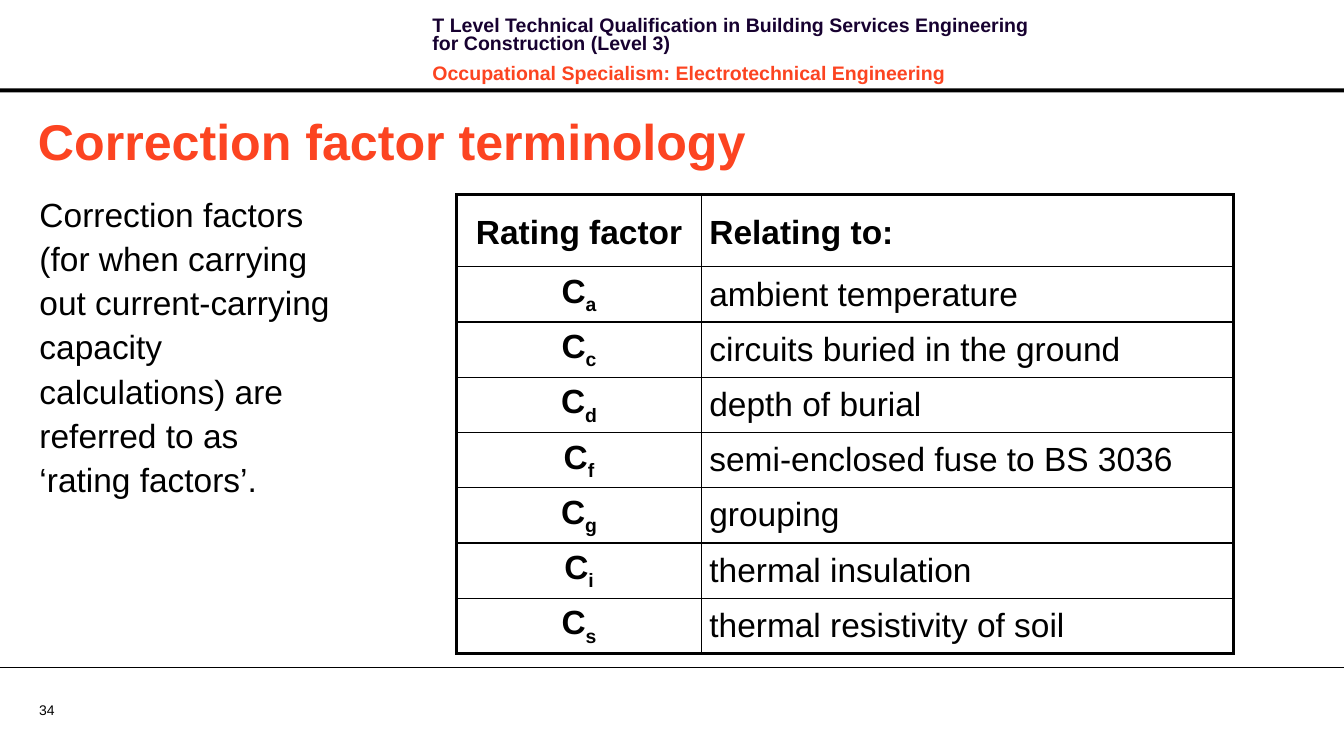
from lxml.etree import SubElement
from pptx import Presentation
from pptx.dml.color import RGBColor
from pptx.enum.shapes import MSO_CONNECTOR, MSO_SHAPE
from pptx.enum.text import MSO_ANCHOR, PP_ALIGN
from pptx.oxml.ns import qn
from pptx.util import Inches, Pt

SLIDE_W, SLIDE_H = Inches(13.39), Inches(7.48)
BLACK, NAVY, ORANGE = "000000", "170130", "FC4421"
OUTER, INNER = 2.25, 1

QUALIFICATION = [
    ("T Level Technical Qualification in Building Services Engineering "
     "for Construction (Level 3)", NAVY),
    ("Occupational Specialism: Electrotechnical Engineering", ORANGE),
]
TITLE = "Correction factor terminology"
EXPLANATION = ("Correction factors (for when carrying out current-carrying capacity "
               "calculations) are referred to as ‘rating factors’.")
HEADINGS = ("Rating factor", "Relating to:")
FACTORS = [
    ("a", "ambient temperature"),
    ("c", "circuits buried in the ground"),
    ("d", "depth of burial"),
    ("f", "semi-enclosed fuse to BS 3036"),
    ("g", "grouping"),
    ("i", "thermal insulation"),
    ("s", "thermal resistivity of soil"),
]


def area(left, top, width, height):
    """Turn percentages of the slide into a box in EMU."""
    return (int(SLIDE_W * left / 100), int(SLIDE_H * top / 100),
            int(SLIDE_W * width / 100), int(SLIDE_H * height / 100))


def rgb(code):
    return RGBColor.from_string(code)


def style(paragraph, size, color=BLACK, bold=False):
    for run in paragraph.runs:
        run.font.name = "Arial"
        run.font.size = Pt(size)
        run.font.bold = bold
        run.font.color.rgb = rgb(color)


def text_frame(slide, box, inset=(0, 0), anchor=MSO_ANCHOR.TOP):
    frame = slide.shapes.add_textbox(*box).text_frame
    frame.word_wrap = True
    frame.vertical_anchor = anchor
    frame.margin_left = frame.margin_right = Inches(inset[0])
    frame.margin_top = frame.margin_bottom = Inches(inset[1])
    return frame


def add_header(slide, box, band_box):
    frame = text_frame(slide, box, (0.1, 0.05))
    for index, (wording, color) in enumerate(QUALIFICATION):
        paragraph = frame.add_paragraph() if index else frame.paragraphs[0]
        paragraph.text = wording
        paragraph.line_spacing = Pt(13.1)
        paragraph.space_before = Pt(4 if index else 0)
        paragraph.space_after = Pt(4)
        style(paragraph, 14, color, True)

    band = slide.shapes.add_shape(MSO_SHAPE.RECTANGLE, *band_box)
    band.shadow.inherit = False
    band.fill.solid()
    band.fill.fore_color.rgb = rgb(BLACK)
    band.line.fill.background()


def add_title(slide, box):
    frame = text_frame(slide, box, (0.1, 0.05), MSO_ANCHOR.MIDDLE)
    frame.text = TITLE
    style(frame.paragraphs[0], 36, ORANGE, True)


def add_explanation(slide, box):
    frame = text_frame(slide, box)
    frame.text = EXPLANATION
    frame.paragraphs[0].line_spacing = 1.1
    style(frame.paragraphs[0], 24)


def set_borders(cell, widths):
    """Draw the left, right, top and bottom edges with widths in points."""
    properties = cell._tc.get_or_add_tcPr()
    for position, (side, width) in enumerate(zip("LRTB", widths)):
        edge = properties.makeelement(qn(f"a:ln{side}"), {"w": str(Pt(width))})
        fill = SubElement(edge, qn("a:solidFill"))
        SubElement(fill, qn("a:srgbClr"), val=BLACK)
        properties.insert(position, edge)


def add_factor_table(slide, box):
    rows = [(HEADINGS[0], "", HEADINGS[1])]
    rows += [("C", subscript, meaning) for subscript, meaning in FACTORS]
    table = slide.shapes.add_table(len(rows), 2, *box).table
    table.first_row = table.horz_banding = False

    width, height = box[2:]
    for column, share in zip(table.columns, (0.315, 0.685)):
        column.width = int(width * share)
    heading_height = int(height * 0.157)
    for index, row in enumerate(table.rows):
        row.height = (height - heading_height) // len(FACTORS) if index else heading_height

    last = len(rows) - 1
    for r, (symbol, subscript, meaning) in enumerate(rows):
        for c, wording in enumerate((symbol, meaning)):
            cell = table.cell(r, c)
            cell.fill.background()
            cell.vertical_anchor = MSO_ANCHOR.MIDDLE
            cell.margin_left = cell.margin_right = Inches(0.08)
            cell.margin_top = cell.margin_bottom = Inches(0.01)
            paragraph = cell.text_frame.paragraphs[0]
            paragraph.text = wording
            paragraph.line_spacing = 1 if subscript else 1.1
            paragraph.alignment = PP_ALIGN.LEFT if c else PP_ALIGN.CENTER
            if subscript and c == 0:
                run = paragraph.add_run()
                run.text = subscript
                run.font._element.set("baseline", "-25000")
            style(paragraph, 24, bold=r == 0 or c == 0)
            outside = (c == 0, c == 1, r == 0, r == last)
            set_borders(cell, [OUTER if edge else INNER for edge in outside])


def add_footer(slide, rule_box, number_box):
    left, top, width, _ = rule_box
    rule = slide.shapes.add_connector(MSO_CONNECTOR.STRAIGHT, left, top, left + width, top)
    rule.line.color.rgb = rgb(BLACK)
    rule.line.width = Pt(0.75)
    SubElement(rule._element.spPr, qn("a:effectLst"))

    frame = text_frame(slide, number_box, anchor=MSO_ANCHOR.MIDDLE)
    frame.text = "34"
    style(frame.paragraphs[0], 10)


def main():
    deck = Presentation()
    deck.slide_width, deck.slide_height = SLIDE_W, SLIDE_H
    slide = deck.slides.add_slide(deck.slide_layouts[6])
    add_footer(slide, area(0, 88.9, 100, 0), area(2.91, 93.45, 4.78, 2.27))
    add_header(slide, area(31.44, 1.74, 47.57, 8.56), area(0, 11.76, 100, 0.53))
    add_title(slide, area(2.09, 13.95, 95, 9.49))
    add_explanation(slide, area(2.94, 25.3, 22.18, 61.5))
    add_factor_table(slide, area(33.98, 25.94, 57.8, 61.1))
    deck.save("out.pptx")


if __name__ == "__main__":
    main()
